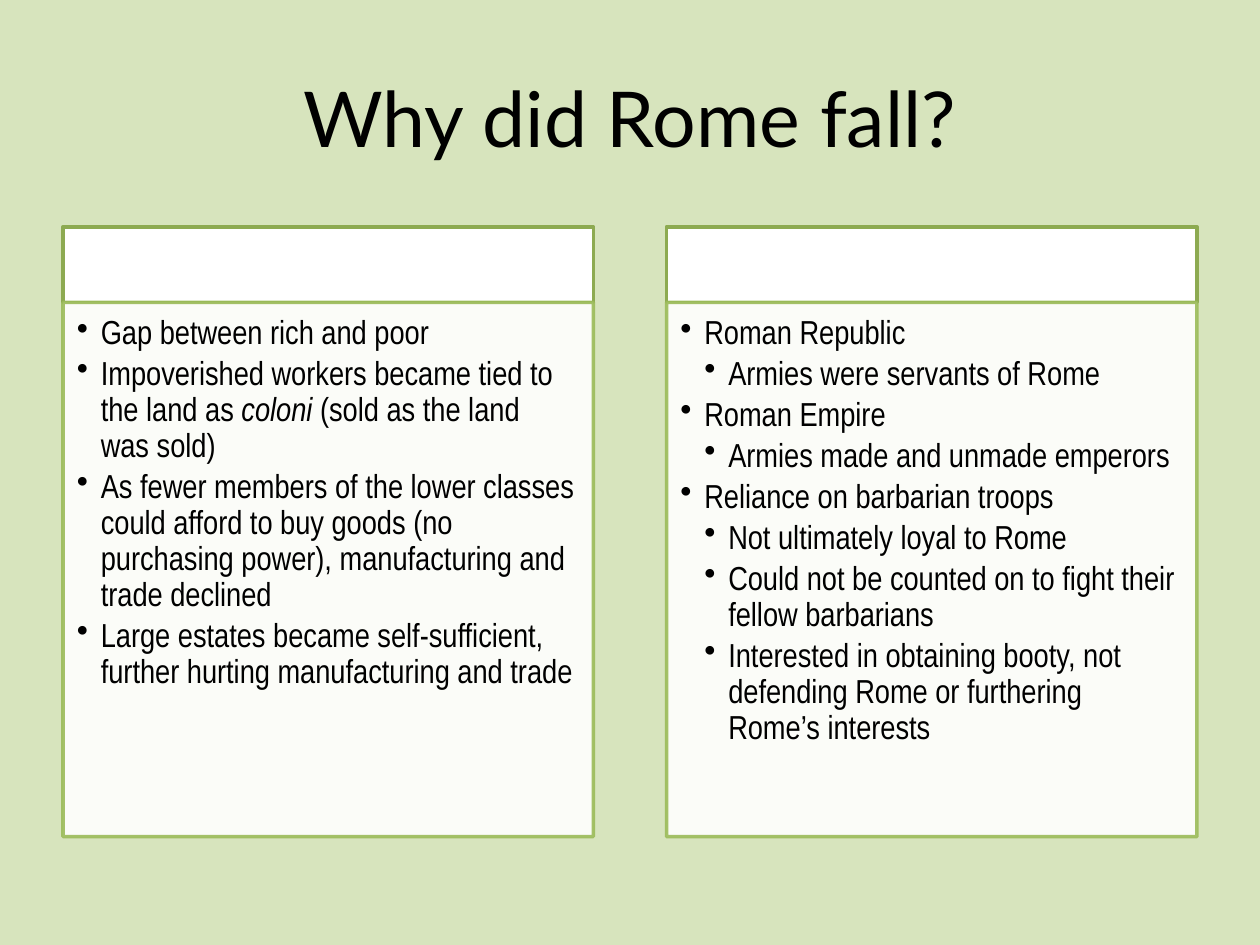
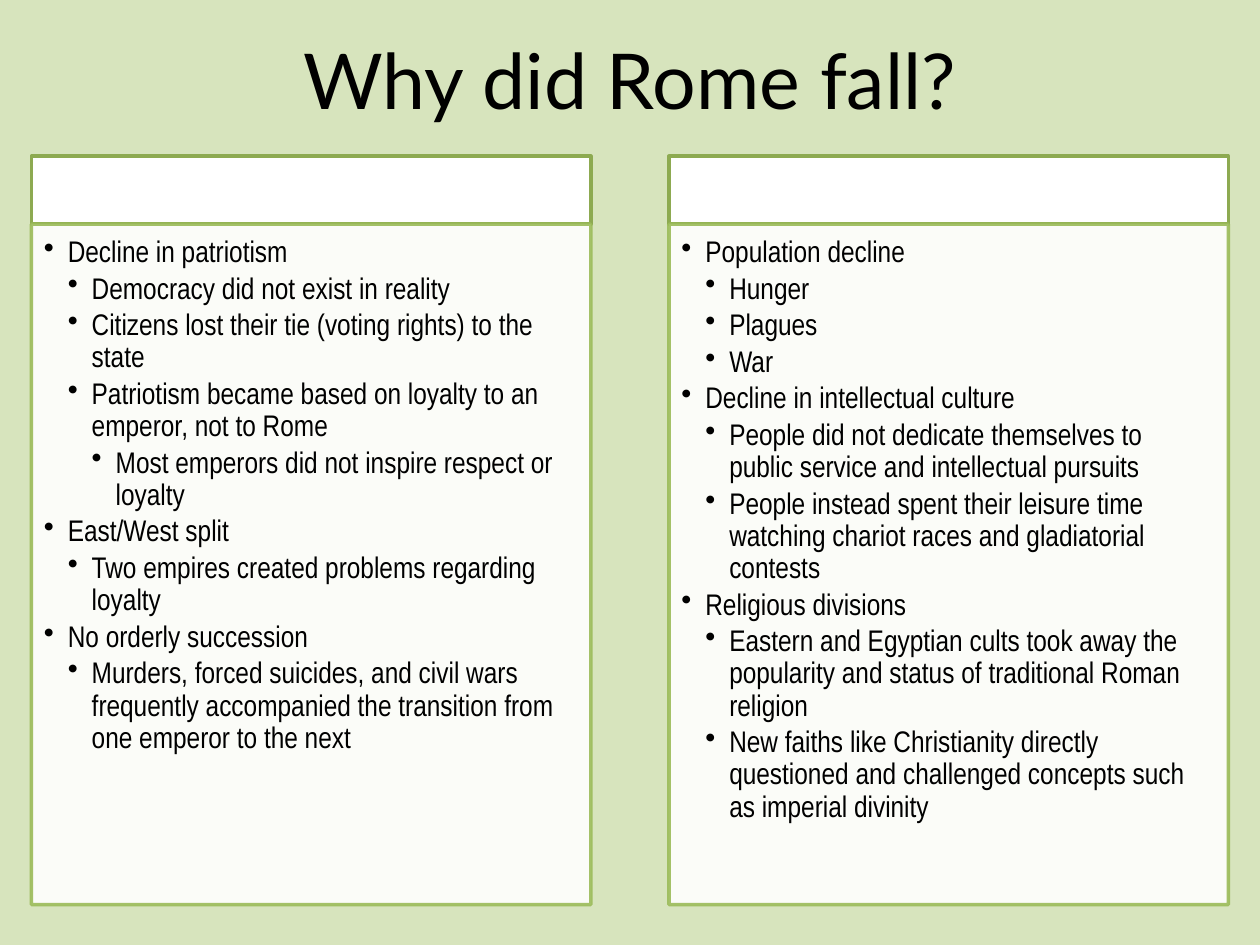
from dataclasses import dataclass

from lxml.etree import SubElement
from pptx import Presentation
from pptx.dml.color import RGBColor
from pptx.enum.shapes import MSO_SHAPE
from pptx.enum.text import MSO_ANCHOR, PP_ALIGN
from pptx.oxml.ns import qn
from pptx.shapes.autoshape import Shape
from pptx.slide import Slide
from pptx.text.text import TextFrame
from pptx.util import Emu, Pt

PX = 9144  # EMU per px, 100 px to the inch
WIDE, HIGH = 1000, 750
STEP = 19  # indent of each bullet level

SAGE = RGBColor(0xD7, 0xE4, 0xBD)
WHITE = RGBColor(0xFF, 0xFF, 0xFF)
BLACK = RGBColor(0x00, 0x00, 0x00)
OLIVE = RGBColor(0x8D, 0xAA, 0x51)
GREEN = RGBColor(0x9B, 0xBB, 0x59)

TITLE = "Why did Rome fall?"


@dataclass(frozen=True)
class Item:
    """A bullet; words between asterisks are italic."""
    text: str
    level: int = 0


@dataclass(frozen=True)
class Page:
    title_top: int
    side: int
    top: int
    width: int
    head: int
    body: int
    size: int
    inset: tuple[int, int, int, int]
    lists: tuple[tuple[Item, ...], ...]


PAGES = (
    Page(30, 50, 180, 421, 60, 424, 19, (11, 11, 15, 17), (
        (
            Item("Gap between rich and poor"),
            Item("Impoverished workers became tied to the land as *coloni* "
                 "(sold as the land was sold)"),
            Item("As fewer members of the lower classes could afford to buy goods "
                 "(no purchasing power), manufacturing and trade declined"),
            Item("Large estates became self-sufficient, further hurting "
                 "manufacturing and trade"),
        ),
        (
            Item("Roman Republic"),
            Item("Armies were servants of Rome", 1),
            Item("Roman Empire"),
            Item("Armies made and unmade emperors", 1),
            Item("Reliance on barbarian troops"),
            Item("Not ultimately loyal to Rome", 1),
            Item("Could not be counted on to fight their fellow barbarians", 1),
            Item("Interested in obtaining booty, not defending Rome or "
                 "furthering Rome’s interests", 1),
        ),
    )),
    Page(0, 25, 124, 444, 54, 540, 17, (10, 10, 13, 15), (
        (
            Item("Decline in patriotism"),
            Item("Democracy did not exist in reality", 1),
            Item("Citizens lost their tie (voting rights) to the state", 1),
            Item("Patriotism became based on loyalty to an emperor, not to Rome", 1),
            Item("Most emperors did not inspire respect or loyalty", 2),
            Item("East/West split"),
            Item("Two empires created problems regarding loyalty", 1),
            Item("No orderly succession"),
            Item("Murders, forced suicides, and civil wars frequently accompanied "
                 "the transition from one emperor to the next", 1),
        ),
        (
            Item("Population decline"),
            Item("Hunger", 1),
            Item("Plagues", 1),
            Item("War", 1),
            Item("Decline in intellectual culture"),
            Item("People did not dedicate themselves to public service and "
                 "intellectual pursuits", 1),
            Item("People instead spent their leisure time watching chariot races "
                 "and gladiatorial contests", 1),
            Item("Religious divisions"),
            Item("Eastern and Egyptian cults took away the popularity and status "
                 "of traditional Roman religion", 1),
            Item("New faiths like Christianity directly questioned and challenged "
                 "concepts such as imperial divinity", 1),
        ),
    )),
)


def px(*sizes: int) -> list[Emu]:
    return [Emu(size * PX) for size in sizes]


def add_title(slide: Slide, top: int) -> None:
    frame = slide.shapes.add_textbox(*px(50, top, 900, 125)).text_frame
    frame.word_wrap = True
    frame.vertical_anchor = MSO_ANCHOR.MIDDLE
    para = frame.paragraphs[0]
    para.text = TITLE
    para.alignment = PP_ALIGN.CENTER
    para.font.name = "Lato"
    para.font.size = Pt(44)
    para.font.color.rgb = BLACK


def add_box(slide: Slide, left: int, top: int, width: int, height: int,
            edge: RGBColor) -> Shape:
    box = slide.shapes.add_shape(MSO_SHAPE.RECTANGLE, *px(left, top, width, height))
    box.shadow.inherit = False
    box.fill.solid()
    box.fill.fore_color.rgb = WHITE
    box.line.color.rgb = edge
    box.line.width = Pt(2)
    return box


def fade(box: Shape, alpha: int) -> None:
    """Give fill and line an opacity in percent."""
    for tint in box._element.spPr.iter(qn("a:srgbClr")):
        SubElement(tint, qn("a:alpha"), val=str(alpha * 1000))


def fill_list(frame: TextFrame, items: tuple[Item, ...], size: int) -> None:
    for index, item in enumerate(items):
        para = frame.add_paragraph() if index else frame.paragraphs[0]
        para.level = item.level
        para.alignment = PP_ALIGN.LEFT
        props = para._p.get_or_add_pPr()
        props.set("marL", str(STEP * (item.level + 1) * PX))
        props.set("indent", str(-STEP * PX))
        SubElement(props, qn("a:buChar"), char="•")
        para.line_spacing = 0.9
        para.space_before = Pt(0)
        para.space_after = Pt(size * 0.15)
        para.font.name = "Arial Narrow"
        para.font.size = Pt(size)
        para.font.color.rgb = BLACK
        for part, words in enumerate(item.text.split("*")):
            run = para.add_run()
            run.text = words
            if part % 2:
                run.font.italic = True


def add_panel(slide: Slide, page: Page, left: int, items: tuple[Item, ...]) -> None:
    add_box(slide, left, page.top, page.width, page.head, OLIVE)
    body = add_box(slide, left, page.top + page.head, page.width, page.body, GREEN)
    fade(body, 90)
    frame = body.text_frame
    frame.word_wrap = True
    frame.vertical_anchor = MSO_ANCHOR.TOP
    (frame.margin_left, frame.margin_top,
     frame.margin_right, frame.margin_bottom) = px(*page.inset)
    fill_list(frame, items, page.size)


def main() -> None:
    deck = Presentation()
    deck.slide_width, deck.slide_height = px(WIDE, HIGH)
    back = deck.slide_master.background.fill
    back.solid()
    back.fore_color.rgb = SAGE
    for page in PAGES:
        slide = deck.slides.add_slide(deck.slide_layouts[6])
        add_title(slide, page.title_top)
        lefts = page.side, WIDE - page.side - page.width
        for left, items in zip(lefts, page.lists):
            add_panel(slide, page, left, items)
    deck.save("out.pptx")


if __name__ == "__main__":
    main()
